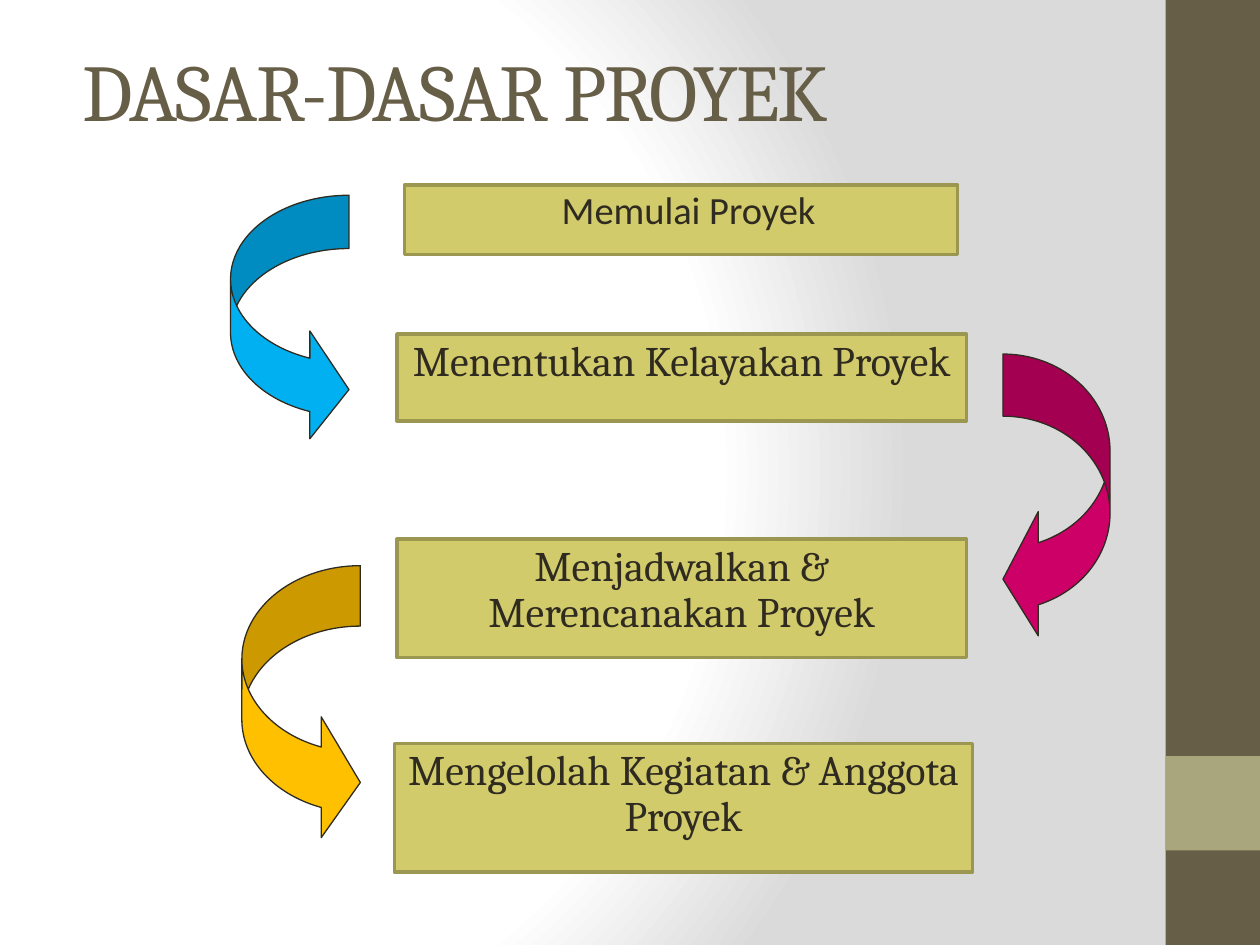
import lxml.etree
import pptx
import pptx.dml.color
import pptx.enum.shapes
import pptx.enum.text
import pptx.oxml
import pptx.oxml.ns
import pptx.util

Inches = pptx.util.Inches
Pt = pptx.util.Pt
RGBColor = pptx.dml.color.RGBColor
SHAPE = pptx.enum.shapes.MSO_SHAPE
qn = pptx.oxml.ns.qn

BROWN = RGBColor(0x67, 0x5E, 0x47)
SAGE = RGBColor(0xA9, 0xA5, 0x7C)
OLIVE = RGBColor(0xD2, 0xCB, 0x6C)
DARK_OLIVE = RGBColor(0x9B, 0x96, 0x50)
INK = RGBColor(0x2F, 0x2B, 0x20)
BLUE = RGBColor(0x00, 0xB0, 0xF0)
MAGENTA = RGBColor(0xCC, 0x00, 0x66)
AMBER = RGBColor(0xFF, 0xC0, 0x00)
WHITE = RGBColor(0xFF, 0xFF, 0xFF)
SILVER = RGBColor(0xDA, 0xDA, 0xDA)

STEPS = [
    ("Memulai Proyek", (3.21, 1.47, 4.39, 0.55), "Calibri", 22, 0.12),
    ("Menentukan Kelayakan Proyek", (3.15, 2.65, 4.52, 0.69), "Cambria", 24, 0),
    ("Menjadwalkan & Merencanakan Proyek", (3.15, 4.28, 4.52, 0.94), "Cambria", 24, 0),
    ("Mengelolah Kegiatan & Anggota Proyek", (3.13, 5.9, 4.59, 1.02), "Cambria", 24, 0),
]
ARROWS = [
    (SHAPE.CURVED_RIGHT_ARROW, (1.83, 1.55, 0.94, 1.97), (0.45, 0.91, 0.33), BLUE),
    (SHAPE.CURVED_LEFT_ARROW, (7.96, 2.81, 0.85, 2.28), (0.58, 1.16, 0.33), MAGENTA),
    (SHAPE.CURVED_RIGHT_ARROW, (1.92, 4.49, 0.94, 2.2), (0.51, 1.02, 0.33), AMBER),
]


def paint_background(slide):
    slide.background.fill.solid()
    properties = slide.element.find(".//" + qn("p:bgPr"))
    stops = "".join(
        f'<a:gs pos="{position * 1000}"><a:srgbClr val="{color}"/></a:gs>'
        for position, color in ((0, WHITE), (75, WHITE), (100, SILVER))
    )
    gradient = pptx.oxml.parse_xml(
        f'<a:gradFill {pptx.oxml.ns.nsdecls("a")} rotWithShape="1"><a:gsLst>{stops}</a:gsLst>'
        '<a:path path="circle"><a:fillToRect l="20000" t="50000" r="100000" b="50000"/>'
        "</a:path></a:gradFill>"
    )
    properties.replace(properties.find(qn("a:solidFill")), gradient)


def add_filled(slide, preset, box, color, outline=None, weight=0):
    figure = slide.shapes.add_shape(preset, *map(Inches, box))
    figure.shadow.inherit = False
    figure.fill.solid()
    figure.fill.fore_color.rgb = color
    if outline is None:
        figure.line.fill.background()
    else:
        figure.line.color.rgb = outline
        figure.line.width = Pt(weight)
    return figure


def add_sidebar(slide, box):
    left, top, width, height = box
    add_filled(slide, SHAPE.RECTANGLE, box, BROWN)
    add_filled(slide, SHAPE.RECTANGLE, (left, top + height - 2 * width, width, width), SAGE)


def add_title(slide, box, wording):
    title = slide.shapes.add_textbox(*map(Inches, box))
    frame = title.text_frame
    frame.word_wrap = True
    frame.vertical_anchor = pptx.enum.text.MSO_ANCHOR.MIDDLE
    heading = frame.paragraphs[0]
    heading.text = wording
    heading.font.name = "Cambria"
    heading.font.size = Pt(46)
    heading.font.color.rgb = BROWN
    heading.runs[0].font._element.set("spc", "-100")


def add_step(slide, wording, box, typeface, size, indent):
    step = add_filled(slide, SHAPE.RECTANGLE, box, OLIVE, DARK_OLIVE, 2)
    frame = step.text_frame
    frame.word_wrap = True
    frame.vertical_anchor = pptx.enum.text.MSO_ANCHOR.TOP
    label = frame.paragraphs[0]
    label.text = wording
    label.alignment = pptx.enum.text.PP_ALIGN.CENTER
    label.line_spacing = 0.9
    label.space_before = Pt(0)
    label.font.name = typeface
    label.font.size = Pt(size)
    label.font.color.rgb = INK
    properties = label._p.get_or_add_pPr()
    properties.set("marL", str(Inches(indent)))
    properties.set("indent", "0")
    spacing = properties.find(qn("a:spcBef"))
    spacing.remove(spacing[0])
    lxml.etree.SubElement(spacing, qn("a:spcPct")).set("val", "20000")


def add_arrow(slide, preset, box, proportions, color):
    arrow = add_filled(slide, preset, box, color, INK, 0.75)
    for index, proportion in enumerate(proportions):
        arrow.adjustments[index] = proportion


def main():
    deck = pptx.Presentation()
    deck.slide_width = Inches(10)
    deck.slide_height = Inches(7.5)
    slide = deck.slides.add_slide(deck.slide_layouts[6])
    paint_background(slide)
    add_sidebar(slide, (9.25, 0, 0.75, 7.5))
    add_title(slide, (0.56, 0.36, 9.75, 0.7), "DASAR-DASAR PROYEK")
    for step in STEPS:
        add_step(slide, *step)
    for arrow in ARROWS:
        add_arrow(slide, *arrow)
    deck.save("out.pptx")


if __name__ == "__main__":
    main()
